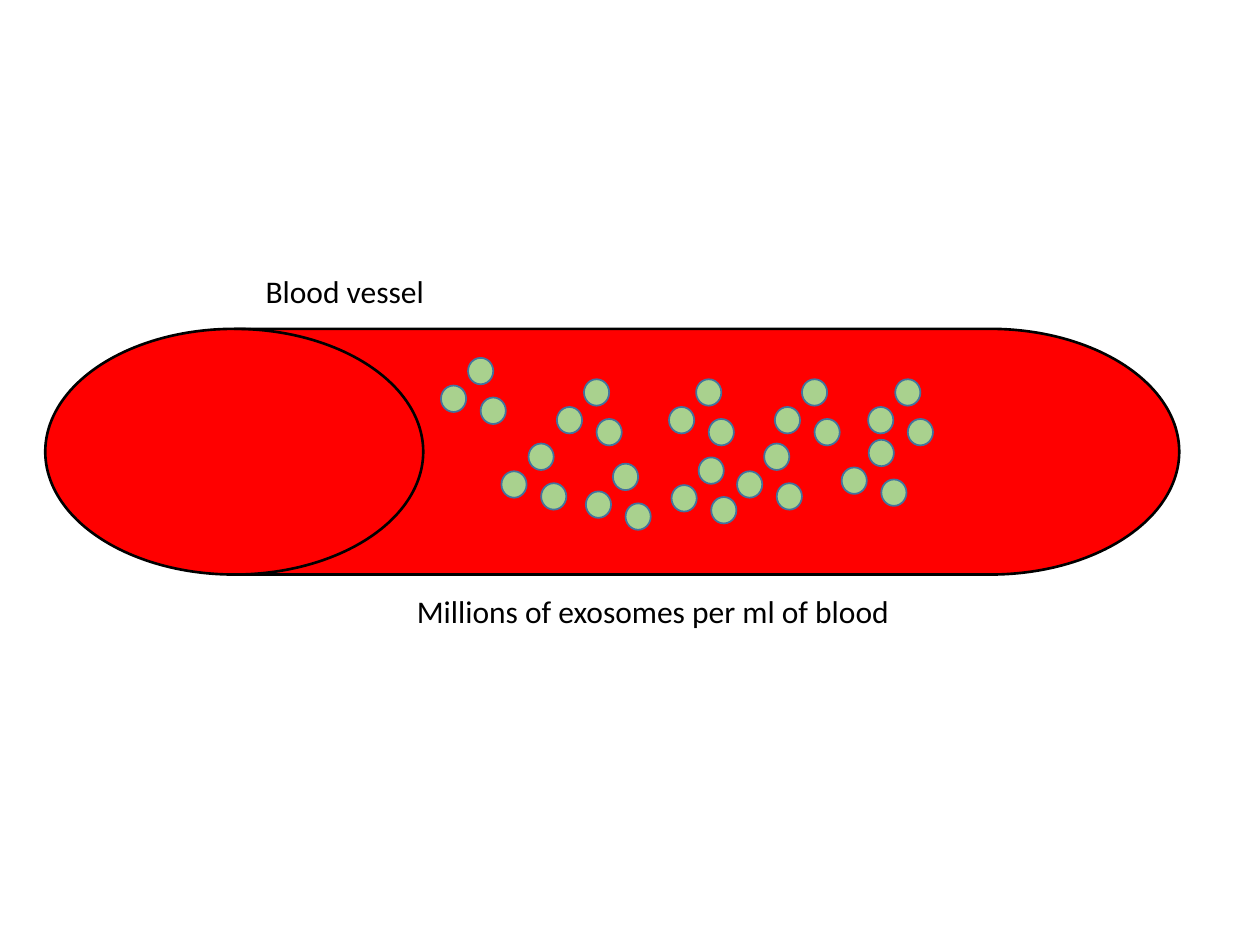
from collections import namedtuple

from pptx import Presentation
from pptx.dml.color import RGBColor
from pptx.enum.shapes import MSO_SHAPE
from pptx.enum.text import MSO_AUTO_SIZE
from pptx.util import Inches, Pt

COLUMNS, ROWS = 100, 75
SLIDE_WIDTH, SLIDE_HEIGHT = Inches(10), Inches(7.5)

Box = namedtuple("Box", "column row columns rows")

SLIDE_BOX = Box(0, 0, COLUMNS, ROWS)
VESSEL_BOX = Box(3.6, 26.1, 90, 19.5)
EXOSOME_SIZE = (2, 2.1)
CLUSTER_SIZE = (5.15, 5.25)
CLUSTER_PLACES = [
    (31.4, 2.3), (40.6, 4), (42.9, 10.7), (49.5, 4), (49.7, 10.2),
    (57.9, 4), (54.9, 9.1), (36.2, 9.1), (65.3, 4), (63.2, 8.8),
]
LABEL_FORMAT = {"name": "Calibri", "size": Pt(18)}


def color(hex_string):
    return RGBColor.from_string(hex_string)


def inside(outer, column, row, columns, rows):
    return Box(outer.column + column, outer.row + row, columns, rows)


def to_lengths(box):
    return (
        round(box.column * SLIDE_WIDTH / COLUMNS),
        round(box.row * SLIDE_HEIGHT / ROWS),
        round(box.columns * SLIDE_WIDTH / COLUMNS),
        round(box.rows * SLIDE_HEIGHT / ROWS),
    )


def add_body(slide, box, outline, fill, line, line_width):
    body = slide.shapes.add_shape(outline, *to_lengths(box))
    body.shadow.inherit = False
    body.fill.solid()
    body.fill.fore_color.rgb = color(fill)
    body.line.color.rgb = color(line)
    body.line.width = Pt(line_width)
    return body


def add_label(slide, box, wording):
    label = slide.shapes.add_textbox(*to_lengths(box))
    frame = label.text_frame
    for name, value in {"word_wrap": False, "auto_size": MSO_AUTO_SIZE.SHAPE_TO_FIT_TEXT}.items():
        setattr(frame, name, value)
    run = frame.paragraphs[0].add_run()
    run.text = wording
    for name, value in LABEL_FORMAT.items():
        setattr(run.font, name, value)
    run.font.color.rgb = color("000000")


def add_cluster(slide, box):
    width, height = EXOSOME_SIZE
    right, bottom = box.columns - width, box.rows - height
    for column, row in [(2.15, 0), (right, bottom), (0, 2.2)]:
        exosome = inside(box, column, row, width, height)
        add_body(slide, exosome, MSO_SHAPE.OVAL, "A9D18E", "43739E", 1)


def add_vessel(slide, box):
    vessel = add_body(slide, box, MSO_SHAPE.FLOWCHART_DIRECT_ACCESS_STORAGE, "FF0000", "000000", 1.5)
    vessel.element.spPr.xfrm.set("flipH", "1")
    for column, row in CLUSTER_PLACES:
        add_cluster(slide, inside(box, column, row, *CLUSTER_SIZE))


def add_blood_slide(slide, box):
    add_vessel(slide, inside(box, *VESSEL_BOX))
    add_label(slide, inside(box, 20.1, 21.1, 16.3, 4), "Blood vessel")
    add_label(slide, inside(box, 32.1, 46.5, 39.9, 4), "Millions of exosomes per ml of blood")


def main():
    presentation = Presentation()
    presentation.slide_width = SLIDE_WIDTH
    presentation.slide_height = SLIDE_HEIGHT
    slide = presentation.slides.add_slide(presentation.slide_layouts[6])
    add_blood_slide(slide, SLIDE_BOX)
    presentation.save("out.pptx")


if __name__ == "__main__":
    main()
